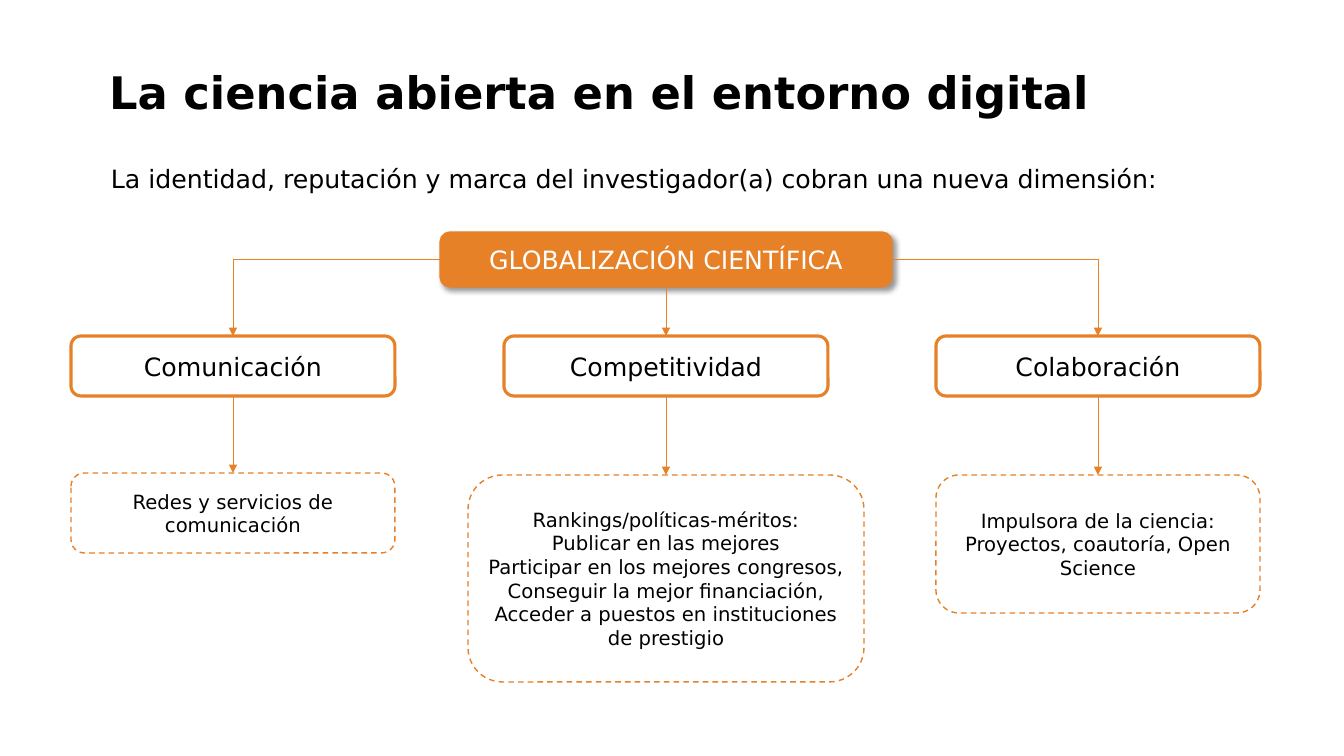
import pptx
import pptx.util
import pptx.dml.color
import pptx.enum.dml
import pptx.enum.shapes
import pptx.enum.text
import pptx.oxml
import pptx.oxml.ns
import lxml.etree

ORANGE = pptx.dml.color.RGBColor(0xE6, 0x81, 0x28)
WHITE = pptx.dml.color.RGBColor(0xFF, 0xFF, 0xFF)
BLACK = pptx.dml.color.RGBColor(0x00, 0x00, 0x00)
FONT = "DejaVu Sans"
PX = 914400 / 100.8
TOP, LEFT, BOTTOM, RIGHT = range(4)
KIND = pptx.enum.shapes.MSO_CONNECTOR
ALIGN = pptx.enum.text.PP_ALIGN
ANCHOR = pptx.enum.text.MSO_ANCHOR
qn = pptx.oxml.ns.qn


def write(shape, lines, size, color, align, anchor, bold=False):
    frame = shape.text_frame
    frame.word_wrap = True
    frame.auto_size = pptx.enum.text.MSO_AUTO_SIZE.NONE
    frame.vertical_anchor = anchor
    for i, line in enumerate(lines):
        para = frame.paragraphs[0] if i == 0 else frame.add_paragraph()
        para.alignment = align
        run = para.add_run()
        run.text = line
        run.font.name = FONT
        run.font.size = pptx.util.Pt(size)
        run.font.bold = bold
        run.font.color.rgb = color


def link(kind, start, side, end):
    line = slide.shapes.add_connector(kind, 0, 0, 0, 0)
    line.begin_connect(start, side)
    line.end_connect(end, TOP)
    line.line.color.rgb = ORANGE
    line.line.width = pptx.util.Pt(0.5)
    props = line._element.spPr
    lxml.etree.SubElement(props.find(qn("a:ln")), qn("a:tailEnd"), type="triangle")
    lxml.etree.SubElement(props, qn("a:effectLst"))
    if kind == KIND.ELBOW:
        props.find(qn("a:prstGeom")).set("prst", "bentConnector2")


deck = pptx.Presentation()
deck.slide_width = round(1344 * PX)
deck.slide_height = round(756 * PX)
slide = deck.slides.add_slide(deck.slide_layouts[5])

title = slide.shapes.title
title.left, title.top, title.width, title.height = [round(n * PX) for n in (99, 60, 1049, 65)]
write(title, ["La ciencia abierta en el entorno digital"], 32, BLACK, ALIGN.LEFT, ANCHOR.TOP, True)

intro = slide.shapes.add_textbox(*[round(n * PX) for n in (101, 158, 1122, 40)])
write(intro, ["La identidad, reputación y marca del investigador(a) cobran una nueva dimensión:"],
      18, BLACK, ALIGN.LEFT, ANCHOR.TOP)

DASH = pptx.enum.dml.MSO_LINE.DASH
boxes = [
    (666, 233, 450, 53, ORANGE, WHITE, 18, 2.25, None, ["GLOBALIZACIÓN CIENTÍFICA"]),
]
columns = [
    (233, "Comunicación", 473, 324, 80, ["Redes y servicios de comunicación"]),
    (666, "Competitividad", 475, 396, 207, [
        "Rankings/políticas-méritos:",
        "Publicar en las mejores",
        "Participar en los mejores congresos,",
        "Conseguir la mejor financiación,",
        "Acceder a puestos en instituciones de prestigio",
    ]),
    (1098, "Colaboración", 475, 324, 138,
     ["Impulsora de la ciencia: Proyectos, coautoría, Open Science"]),
]
for mid, head, top, width, height, lines in columns:
    boxes.append((mid, 336, 324, 60, WHITE, BLACK, 18, 2.25, None, [head]))
    boxes.append((mid, top, width, height, WHITE, BLACK, 14, 1, DASH, lines))

made = []
for mid, top, width, height, fill, ink, size, weight, dash, lines in boxes:
    box = slide.shapes.add_shape(
        pptx.enum.shapes.MSO_SHAPE.ROUNDED_RECTANGLE,
        *[round(n * PX) for n in (mid - width // 2, top, width, height)])
    box.shadow.inherit = False
    box.fill.solid()
    box.fill.fore_color.rgb = fill
    box.line.color.rgb = ORANGE
    box.line.width = pptx.util.Pt(weight)
    if dash:
        box.line.dash_style = dash
    write(box, lines, size, ink, ALIGN.CENTER, ANCHOR.MIDDLE)
    made.append(box)

root = made[0]
glow = lxml.etree.SubElement(
    root._element.spPr.find(qn("a:effectLst")), qn("a:outerShdw"),
    blurRad=str(pptx.util.Pt(4)), dist=str(pptx.util.Pt(3)), dir="2700000", algn="tl", rotWithShape="0")
shade = lxml.etree.SubElement(glow, qn("a:srgbClr"), val="000000")
lxml.etree.SubElement(shade, qn("a:alpha"), val="40000")

routes = [(KIND.ELBOW, LEFT), (KIND.STRAIGHT, BOTTOM), (KIND.ELBOW, RIGHT)]
for (kind, side), head, note in zip(routes, made[1::2], made[2::2]):
    link(kind, root, side, head)
    link(KIND.STRAIGHT, head, BOTTOM, note)

deck.save("out.pptx")
